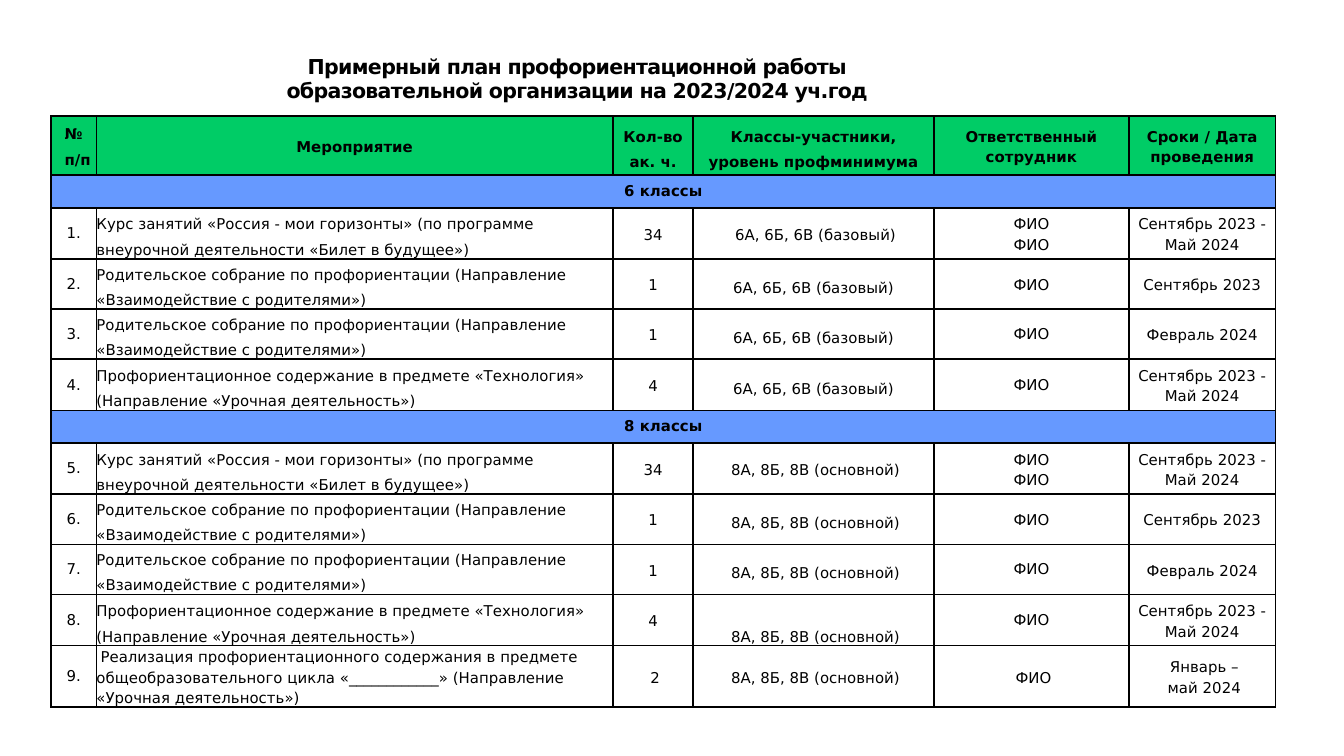
from lxml.etree import SubElement
from pptx import Presentation
from pptx.dml.color import RGBColor
from pptx.enum.text import MSO_ANCHOR, MSO_AUTO_SIZE, PP_ALIGN
from pptx.oxml.ns import qn
from pptx.util import Pt

FONT = "DejaVu Sans"
COLORS = {"text": "000000", "border": "000000", "header": "00CC66",
          "grade": "6699FF", "plain": "FFFFFF"}
COLUMN_WIDTHS = [24.25, 276.75, 43, 129, 104.5, 78.5]
HEADER_HEIGHT, GRADE_HEIGHT, EVENT_HEIGHT, LAST_HEIGHT = 31.7, 17.5, 23, 31

# Header cells: lines and paragraph format
HEADERS = [
    ("№\nп/п", dict(align=PP_ALIGN.LEFT, margin=7.2, line=11, gap=3)),
    ("Мероприятие", dict(line=11)),
    ("Кол-во ак. ч.", dict(line=13.9)),
    ("Классы-участники,\nуровень профминимума", dict(line=13.9)),
    ("Ответственный сотрудник", dict(line=11, after=6)),
    ("Сроки / Дата проведения", dict(line=11, after=6)),
]

MEETING = ("Родительское собрание по профориентации "
           "(Направление «Взаимодействие с родителями»)")
SCHOOL_YEAR = "Сентябрь 2023 - Май 2024"
# Event, its line spacing, hours, class line spacing, staff, staff line spacing,
# dates, space after dates
EVENTS = [
    ("Курс занятий «Россия - мои горизонты» (по программе внеурочной "
     "деятельности «Билет в будущее»)", 13.7, 34, 11, "ФИО\nФИО", 11, SCHOOL_YEAR, 3),
    (MEETING, 13.4, 1, 13.7, "ФИО", 11, "Сентябрь 2023", 0),
    (MEETING, 13.4, 1, 13.7, "ФИО", None, "Февраль 2024", 0),
    ("Профориентационное содержание в предмете «Технология» "
     "(Направление «Урочная деятельность»)", 13.7, 4, 13.7, "ФИО", None, SCHOOL_YEAR, 3),
]
SUBJECT_EVENT = (
    "Реализация профориентационного содержания в предмете общеобразовательного "
    "цикла «____________» (Направление «Урочная деятельность»)",
    11, 2, 11, "ФИО", 11, "Январь –\nмай 2024", 0)
GRADES = [
    ("6 классы", "6А, 6Б, 6В (базовый)", EVENTS),
    ("8 классы", "8А, 8Б, 8В (основной)", EVENTS + [SUBJECT_EVENT]),
]


def write_text(text_frame, text, size=8, bold=False, align=PP_ALIGN.CENTER, line=None,
               gap=0, after=0, margin=0, indent=0, tracking=0):
    """Write one paragraph per line; gap lies between lines, after below the last."""
    lines = text.split("\n")
    for index, content in enumerate(lines):
        paragraph = text_frame.paragraphs[0] if index == 0 else text_frame.add_paragraph()
        paragraph.alignment = align
        paragraph.space_before = Pt(0)
        paragraph.space_after = Pt(after if index == len(lines) - 1 else gap)
        if line:
            paragraph.line_spacing = Pt(line)
        properties = paragraph._p.get_or_add_pPr()
        properties.set("marL", str(Pt(margin)))
        properties.set("indent", str(Pt(indent)))
        run = paragraph.add_run()
        run.text = content
        run.font.name = FONT
        run.font.size = Pt(size)
        run.font.bold = bold
        run.font.color.rgb = RGBColor.from_string(COLORS["text"])
        if tracking:
            run._r.get_or_add_rPr().set("spc", str(round(tracking * 100)))


def format_cell(cell, fill):
    cell.margin_left = cell.margin_right = cell.margin_top = cell.margin_bottom = 0
    cell.vertical_anchor = MSO_ANCHOR.MIDDLE
    properties = cell._tc.get_or_add_tcPr()
    for side in ("a:lnL", "a:lnR", "a:lnT", "a:lnB"):
        border = SubElement(properties, qn(side), w=str(Pt(1)))
        solid = SubElement(border, qn("a:solidFill"))
        SubElement(solid, qn("a:srgbClr"), val=COLORS["border"])
    cell.fill.solid()
    cell.fill.fore_color.rgb = RGBColor.from_string(COLORS[fill])


def format_row(table, row, height, fill):
    table.rows[row].height = Pt(height)
    for column in range(len(COLUMN_WIDTHS)):
        format_cell(table.cell(row, column), fill)


def add_title(slide):
    title = slide.shapes.title
    title.left, title.top, title.width, title.height = Pt(17.3), Pt(28), Pt(584), Pt(27.5)
    text_frame = title.text_frame
    text_frame.margin_left = text_frame.margin_right = text_frame.margin_bottom = 0
    text_frame.margin_top = Pt(0.75)
    text_frame.vertical_anchor = MSO_ANCHOR.TOP
    text_frame.word_wrap = True
    text_frame.auto_size = MSO_AUTO_SIZE.SHAPE_TO_FIT_TEXT
    write_text(text_frame, "Примерный план профориентационной работы\n"
               "образовательной организации на 2023/2024 уч.год",
               size=11, bold=True, tracking=-0.4)


def add_plan_table(slide):
    row_count = 1 + sum(1 + len(events) for _, _, events in GRADES)
    table = slide.shapes.add_table(
        row_count, len(COLUMN_WIDTHS), Pt(27.4), Pt(62.2),
        Pt(sum(COLUMN_WIDTHS)), Pt(292)).table
    table.first_row = table.horz_banding = False
    for column, width in zip(table.columns, COLUMN_WIDTHS):
        column.width = Pt(width)
    return table


def fill_header(table):
    format_row(table, 0, HEADER_HEIGHT, "header")
    for column, (text, style) in enumerate(HEADERS):
        write_text(table.cell(0, column).text_frame, text, bold=True, **style)


def fill_grade(table, row, name):
    format_row(table, row, GRADE_HEIGHT, "grade")
    table.cell(row, 0).merge(table.cell(row, len(COLUMN_WIDTHS) - 1))
    write_text(table.cell(row, 0).text_frame, name, bold=True)


def fill_event(table, row, number, classes, event):
    text, text_line, hours, class_line, staff, staff_line, dates, after = event
    is_last = event is SUBJECT_EVENT
    indent = 2.2 if is_last else 0
    format_row(table, row, LAST_HEIGHT if is_last else EVENT_HEIGHT, "plain")
    cells = [
        (f"{number}.", {}),
        (text, dict(align=PP_ALIGN.LEFT, line=text_line, indent=indent)),
        (str(hours), dict(line=11, indent=indent)),
        (classes, dict(line=class_line, indent=2.2 if number in (1, 5, 6, 7, 8, 9) else 0)),
        (staff, dict(line=staff_line, indent=indent)),
        (dates, dict(line=11, after=after, indent=indent)),
    ]
    for column, (content, style) in enumerate(cells):
        write_text(table.cell(row, column).text_frame, content, **style)
    # The classes of event 8 stand at the foot of their cell
    if number == 8:
        table.cell(row, 3).vertical_anchor = MSO_ANCHOR.BOTTOM


def main():
    presentation = Presentation()
    presentation.slide_width, presentation.slide_height = Pt(720), Pt(405)
    slide = presentation.slides.add_slide(presentation.slide_layouts[5])
    add_title(slide)

    # Plan table: header, then a band and its events for each grade
    table = add_plan_table(slide)
    fill_header(table)
    row, number = 1, 1
    for name, classes, events in GRADES:
        fill_grade(table, row, name)
        row += 1
        for event in events:
            fill_event(table, row, number, classes, event)
            row += 1
            number += 1

    presentation.save("out.pptx")


if __name__ == "__main__":
    main()
